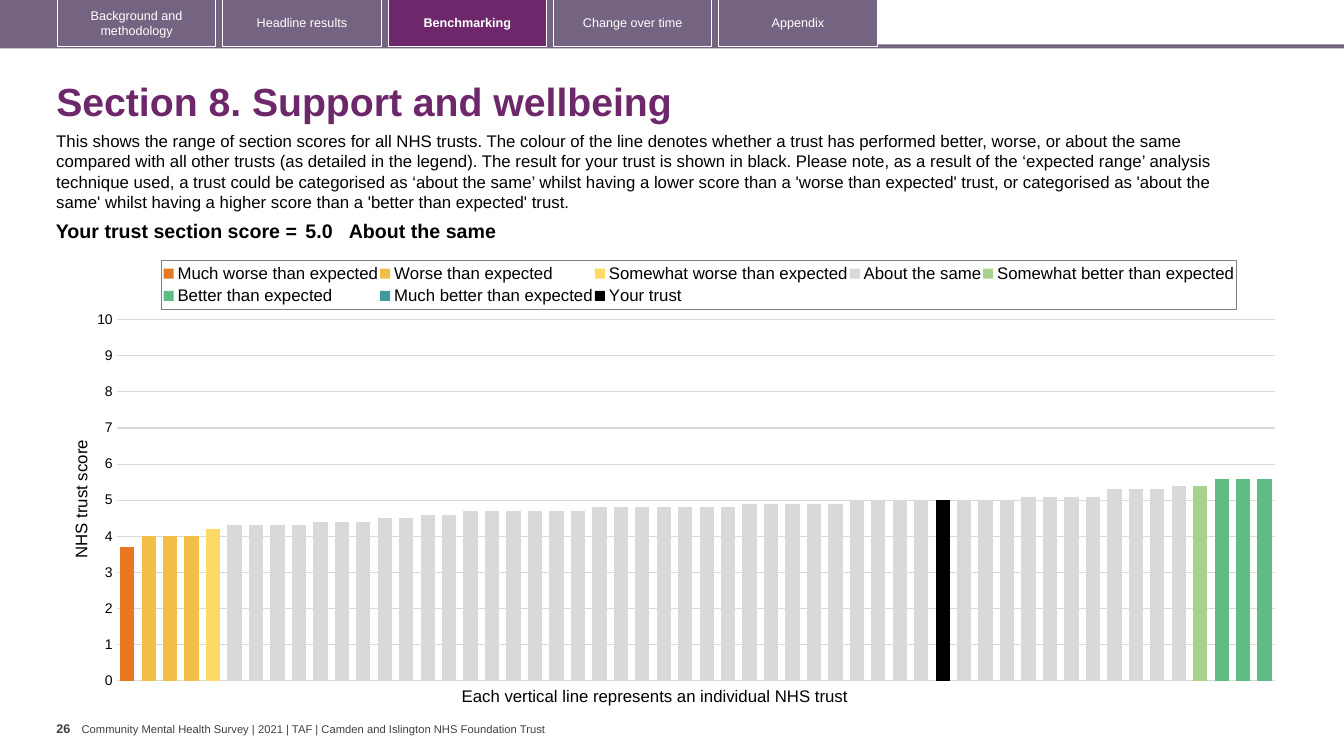
from copy import deepcopy
from itertools import chain, repeat

from lxml import etree
from pptx import Presentation
from pptx import util as u
from pptx.chart import data as cd
from pptx.dml.color import RGBColor
from pptx.enum import chart as ch, shapes, text
from pptx.oxml import parse_xml
from pptx.oxml.ns import nsdecls, qn

PLUM = RGBColor(0x6D, 0x27, 0x6A)
MAUVE = RGBColor(0x75, 0x63, 0x82)
WHITE = RGBColor(0xFF, 0xFF, 0xFF)
BLACK = RGBColor(0, 0, 0)
SLATE = RGBColor(0x40, 0x40, 0x40)
GREY = RGBColor(0xD9, 0xD9, 0xD9)
ORANGE = RGBColor(0xE8, 0x77, 0x22)
AMBER = RGBColor(0xF1, 0xBE, 0x48)
YELLOW = RGBColor(0xFF, 0xD9, 0x66)
LIME = RGBColor(0xA9, 0xD1, 0x8E)
GREEN = RGBColor(0x5F, 0xBD, 0x83)
TEAL = RGBColor(0x41, 0x99, 0x99)

TABS = ["Background and methodology", "Headline results", "Benchmarking",
        "Change over time", "Appendix"]
NOTE = (
    "This shows the range of section scores for all NHS trusts. The colour of the line "
    "denotes whether a trust has performed better, worse, or about the same compared with "
    "all other trusts (as detailed in the legend). The result for your trust is shown in "
    "black. Please note, as a result of the ‘expected range’ analysis technique used, a "
    "trust could be categorised as ‘about the same’ whilst having a lower score than a "
    "'worse than expected' trust, or categorised as 'about the same' whilst having a higher "
    "score than a 'better than expected' trust.")
FOOT = "Community Mental Health Survey | 2021 | TAF | Camden and Islington NHS Foundation Trust"

COUNT = 54
SAME = [(4.3, 4), (4.4, 3), (4.5, 2), (4.6, 2), (4.7, 6), (4.8, 7), (4.9, 5),
        (5, 8), (5.1, 4), (5.3, 3), (5.4, 1)]
BANDS = [
    ("Much worse than expected", ORANGE, 0, [3.7]),
    ("Worse than expected", AMBER, 1, [4, 4, 4]),
    ("Somewhat worse than expected", YELLOW, 4, [4.2]),
    ("About the same", GREY, 5, list(chain.from_iterable(repeat(v, n) for v, n in SAME))),
    ("Somewhat better than expected", LIME, 50, [5.4]),
    ("Better than expected", GREEN, 51, [5.6] * 3),
    ("Much better than expected", TEAL, 54, []),
    ("Your trust", BLACK, 38, [5]),
]


def style(font, size, color=BLACK, bold=False):
    """Set the typeface, size, colour and weight of a font."""
    font.name = "Arial"
    font.size = u.Pt(size)
    font.color.rgb = color
    font.bold = bold


def label(slide, box, words, size, color=BLACK, bold=False, wrap=True, inset=0.1,
          anchor=text.MSO_ANCHOR.TOP):
    """Place a line or paragraph of text in a box."""
    frame = slide.shapes.add_textbox(*map(u.Inches, box)).text_frame
    frame.word_wrap = wrap
    frame.margin_left = frame.margin_right = u.Inches(inset)
    frame.vertical_anchor = anchor
    para = frame.paragraphs[0]
    para.text = words
    style(para.font, size, color, bold)
    return frame


def block(slide, box, fill=None, line=None):
    """Draw a plain rectangle."""
    rect = slide.shapes.add_shape(shapes.MSO_SHAPE.RECTANGLE, *map(u.Inches, box))
    rect.shadow.inherit = False
    if fill is None:
        rect.fill.background()
    else:
        rect.fill.solid()
        rect.fill.fore_color.rgb = fill
    if line is None:
        rect.line.fill.background()
    else:
        rect.line.color.rgb = line
        rect.line.width = u.Pt(0.75)
    return rect


def tab_bar(slide, box, current):
    """Draw the row of section tabs on its band and rule."""
    left, top, width, height = box
    block(slide, (left, top + 0.44, width, 0.04), MAUVE)
    block(slide, (left, top, 8.73, height), MAUVE)
    for i, name in enumerate(TABS):
        here = name == current
        tab = block(slide, (left + 0.6 + 1.64 * i, top - 0.01, 1.57, height),
                    PLUM if here else None, WHITE)
        frame = tab.text_frame
        frame.word_wrap = True
        frame.vertical_anchor = text.MSO_ANCHOR.MIDDLE
        para = frame.paragraphs[0]
        para.text = name
        para.alignment = text.PP_ALIGN.CENTER
        style(para.font, 9, WHITE, here)


def heading(slide, box):
    """Place the section title and the note below it."""
    left, top, width, height = box
    title = label(slide, (left, top, width, height), "Section 8. Support and wellbeing",
                  28, PLUM, True, anchor=text.MSO_ANCHOR.MIDDLE)
    title.paragraphs[0].line_spacing = 0.9
    label(slide, (left, top + 0.58, 12.13, 0.91), NOTE, 12)


def score_row(slide, box):
    """Place the one-row table with the section score."""
    table = slide.shapes.add_table(1, 3, *map(u.Inches, box)).table
    table.first_row = table.horz_banding = False
    parts = [("Your trust section score =", 2.63, 0.04), ("5.0", 0.47, 0.04),
             ("About the same", 8.59, 0)]
    for i, (words, width, side) in enumerate(parts):
        table.columns[i].width = u.Inches(width)
        cell = table.cell(0, i)
        cell.fill.background()
        cell.margin_left = cell.margin_right = u.Inches(side)
        cell.margin_top = cell.margin_bottom = u.Inches(0.04)
        para = cell.text_frame.paragraphs[0]
        para.text = words
        style(para.font, 14, bold=True)
    table.cell(0, 0).text_frame.paragraphs[0].alignment = text.PP_ALIGN.RIGHT


def pin(node, inner=False, **spots):
    """Fix the place of a chart part as shares of the chart."""
    for old in node.findall(qn("c:layout")):
        node.remove(old)
    layout = parse_xml(f"<c:layout {nsdecls('c')}><c:manualLayout/></c:layout>")
    marks = [("layoutTarget", "inner")] if inner else []
    marks += [("xMode", "edge"), ("yMode", "edge"), *spots.items()]
    for tag, val in marks:
        etree.SubElement(layout[0], qn("c:" + tag)).set("val", str(val))
    if inner:
        node.insert(0, layout)
    else:
        node.find(qn("c:overlay")).addprevious(layout)


def right_axis(area):
    """Move the last series to a second axis on the right."""
    bars, cat, val = (area.find(qn("c:" + tag)) for tag in ("barChart", "catAx", "valAx"))
    extra, cat2, val2 = map(deepcopy, (bars, cat, val))
    sers = bars.findall(qn("c:ser"))
    bars.remove(sers[-1])
    for ser in extra.findall(qn("c:ser"))[:-1]:
        extra.remove(ser)
    bars.addnext(extra)
    val.addnext(val2)
    val2.addnext(cat2)
    ids = {cat.find(qn("c:axId")).get("val"): "5001",
           val.find(qn("c:axId")).get("val"): "5002"}
    for part in (extra, cat2, val2):
        for tag in ("c:axId", "c:crossAx"):
            for node in part.findall(qn(tag)):
                node.set("val", ids[node.get("val")])
    for tag in ("c:majorGridlines", "c:title"):
        val2.remove(val2.find(qn(tag)))
    for tag, mark in [("axPos", "r"), ("majorTickMark", "out"), ("tickLblPos", "none"),
                      ("crosses", "max")]:
        val2.find(qn("c:" + tag)).set("val", mark)


def score_chart(slide, box):
    """Draw the trust scores as columns coloured by band."""
    data = cd.CategoryChartData()
    data.categories = [str(n + 1) for n in range(COUNT)]
    for name, _, start, vals in BANDS:
        data.add_series(name, [None] * start + vals + [None] * (COUNT - start - len(vals)))
    chart = slide.shapes.add_chart(ch.XL_CHART_TYPE.COLUMN_CLUSTERED,
                                   *map(u.Inches, box), data).chart
    chart.has_title = False
    style(chart.font, 10)
    plot = chart.plots[0]
    plot.gap_width, plot.overlap = 50, 100
    plot.vary_by_categories = False
    for series, band in zip(plot.series, BANDS):
        series.format.fill.solid()
        series.format.fill.fore_color.rgb = band[1]

    chart.category_axis.visible = False
    axis = chart.value_axis
    axis.minimum_scale, axis.maximum_scale, axis.major_unit = 0, 10, 1
    axis.major_tick_mark = ch.XL_TICK_MARK.NONE
    axis.format.line.fill.background()
    axis.major_gridlines.format.line.color.rgb = GREY
    axis.major_gridlines.format.line.width = u.Pt(0.75)
    style(axis.tick_labels.font, 10)
    para = axis.axis_title.text_frame.paragraphs[0]
    para.text = "NHS trust score"
    style(para.font, 12)
    pin(axis.axis_title._element, x=0, y=0.42)

    chart.has_legend = True
    legend = chart.legend
    legend.position = ch.XL_LEGEND_POSITION.TOP
    legend.include_in_layout = False
    style(legend.font, 12)
    node = legend._element
    pin(node, x=0.077, y=0.025, w=0.877, h=0.11)
    node.find(qn("c:overlay")).addnext(parse_xml(
        f'<c:spPr {nsdecls("c", "a")}><a:ln w="9525"><a:solidFill>'
        '<a:srgbClr val="7F7F7F"/></a:solidFill></a:ln></c:spPr>'))
    area = chart._chartSpace.chart.plotArea
    right_axis(area)
    pin(area, True, x=0.04, y=0.158, w=0.946, h=0.807)


def footer(slide, box):
    """Place the page number and the survey name."""
    left, top, width, height = box
    label(slide, (left, top, 0.25, height), "26", 9, SLATE, True, False, 0)
    label(slide, (left + 0.25, top + 0.07, width - 0.25, 0.13), FOOT, 8, SLATE,
          wrap=False, inset=0, anchor=text.MSO_ANCHOR.MIDDLE)


def main():
    """Build the slide and save it."""
    deck = Presentation()
    deck.slide_width, deck.slide_height = u.Inches(13.33), u.Inches(7.5)
    slide = deck.slides.add_slide(deck.slide_layouts[6])
    tab_bar(slide, (-0.03, 0, 13.36, 0.47), "Benchmarking")
    heading(slide, (0.46, 0.67, 12.49, 0.72))
    score_chart(slide, (0.67, 2.47, 12.15, 4.44))
    label(slide, (4.48, 6.75, 4.11, 0.3),
          "Each vertical line represents an individual NHS trust", 12, wrap=False)
    score_row(slide, (0.36, 2.15, 11.69, 0.31))
    footer(slide, (0.56, 7.1, 4.92, 0.4))
    deck.save("out.pptx")


if __name__ == "__main__":
    main()
